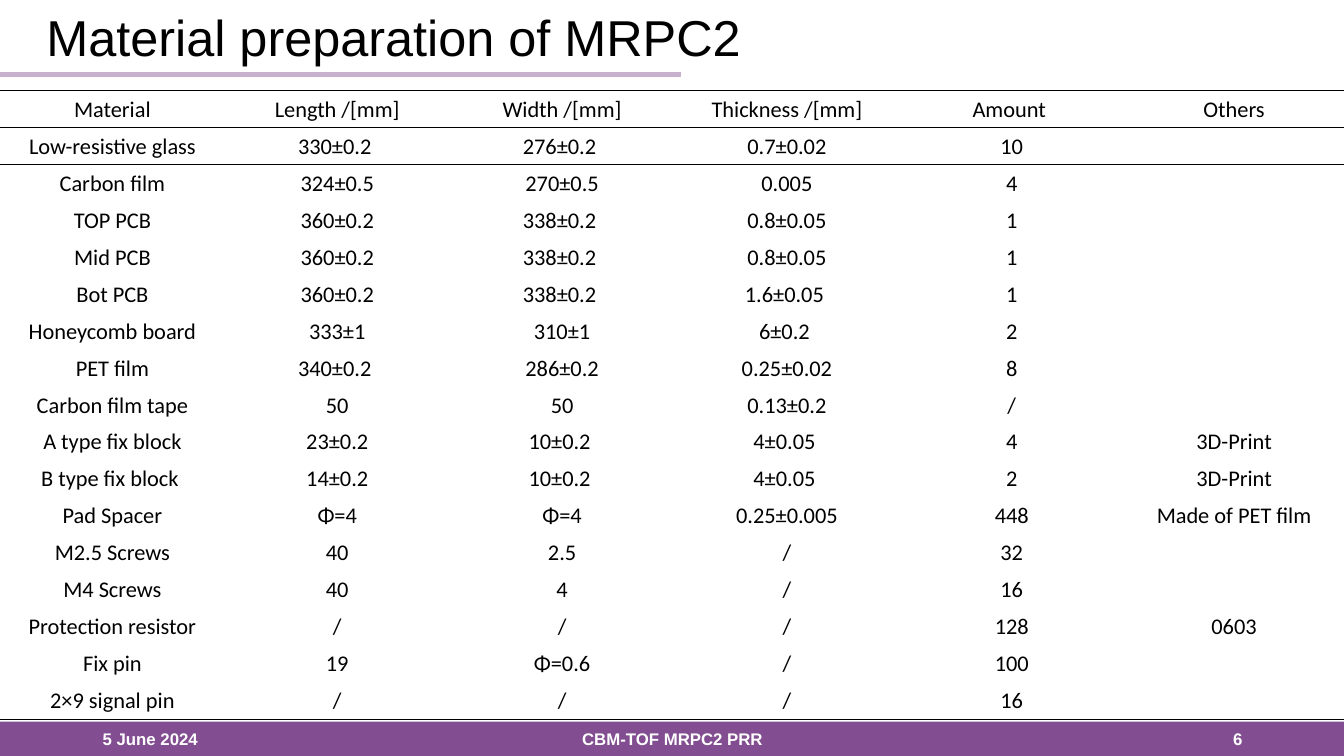
from lxml import etree
from pptx import Presentation
from pptx import util as u
from pptx.dml.color import RGBColor
from pptx.enum import shapes, text
from pptx.oxml import ns

PX = 9144
BLACK = RGBColor(0x00, 0x00, 0x00)
WHITE = RGBColor(0xFF, 0xFF, 0xFF)
LILAC = RGBColor(0xC8, 0xB0, 0xCF)
PURPLE = RGBColor(0x70, 0x33, 0x81)
NO_STYLE = "{2D5ABB26-0587-4C30-8999-92F81FD0307C}"
COLUMN_WIDTHS = [223] * 5 + [218]
ROW_HEIGHT = 33
MATERIALS = """\
Material|Length /[mm]|Width /[mm]|Thickness /[mm]|Amount |Others
Low-resistive glass|330±0.2 |276±0.2 |0.7±0.02|10|
Carbon film|324±0.5|270±0.5|0.005|4|
TOP PCB|360±0.2|338±0.2 |0.8±0.05|1|
Mid PCB|360±0.2|338±0.2 |0.8±0.05|1|
Bot PCB|360±0.2|338±0.2 |1.6±0.05 |1|
Honeycomb board|333±1|310±1|6±0.2 |2|
PET film|340±0.2 |286±0.2|0.25±0.02|8|
Carbon film tape|50|50|0.13±0.2|/|
A type fix block|23±0.2|10±0.2 |4±0.05 |4|3D-Print
B type fix block |14±0.2|10±0.2 |4±0.05 |2|3D-Print
Pad Spacer|Φ=4|Φ=4|0.25±0.005|448|Made of PET film
M2.5 Screws|40|2.5|/|32|
M4 Screws|40|4|/|16|
Protection resistor|/|/|/|128|0603
Fix pin|19|Φ=0.6|/|100|
2×9 signal pin|/|/|/|16|"""


def px(*lengths):
    """Turn pixel lengths into EMU."""
    return [u.Emu(length * PX) for length in lengths]


def add_run(paragraph, words, size, font_name, color, bold=False):
    """Append one formatted run to a paragraph."""
    run = paragraph.add_run()
    run.text = words
    run.font.size = u.Pt(size)
    run.font.name = font_name
    run.font.bold = bold
    run.font.color.rgb = color


def set_title(slide, words):
    """Place and fill the title placeholder."""
    title = slide.shapes.title
    title.left, title.top, title.width, title.height = px(36, 6, 1254, 68)
    title.text_frame.vertical_anchor = text.MSO_ANCHOR.MIDDLE
    title.text_frame.auto_size = text.MSO_AUTO_SIZE.NONE
    paragraph = title.text_frame.paragraphs[0]
    paragraph.alignment = text.PP_ALIGN.LEFT
    paragraph.line_spacing = 0.9
    add_run(paragraph, words, 36, "Arial", BLACK)


def add_title_rule(slide):
    """Draw the lilac line under the title."""
    rule = slide.shapes.add_connector(shapes.MSO_CONNECTOR.STRAIGHT, *px(0, 74, 675, 74))
    rule.line.color.rgb = LILAC
    rule.line.width = u.Pt(3)
    etree.SubElement(rule.element.spPr, ns.qn("a:effectLst"))


def add_footer_band(slide):
    """Draw the translucent purple band at the foot."""
    band = slide.shapes.add_shape(shapes.MSO_SHAPE.RECTANGLE, *px(0, 716, 1333, 34))
    band.shadow.inherit = False
    band.fill.solid()
    band.fill.fore_color.rgb = PURPLE
    band.line.fill.background()
    color = band.element.spPr.find(".//" + ns.qn("a:srgbClr"))
    etree.SubElement(color, ns.qn("a:alpha"), val="87000")


def add_footer_text(slide, left, width, words, alignment):
    """Add one bold white label on the footer band."""
    box = slide.shapes.add_textbox(*px(left, 713, width, 40))
    box.text_frame.word_wrap = True
    box.text_frame.vertical_anchor = text.MSO_ANCHOR.MIDDLE
    paragraph = box.text_frame.paragraphs[0]
    paragraph.alignment = alignment
    add_run(paragraph, words, 12, "Arial", WHITE, bold=True)


def add_border(properties, tag):
    """Put a thin black border before the other cell properties."""
    border = etree.Element(ns.qn(tag), w=str(u.Pt(1)))
    fill = etree.SubElement(border, ns.qn("a:solidFill"))
    etree.SubElement(fill, ns.qn("a:srgbClr"), val=str(BLACK))
    properties.insert(0, border)


def fill_cell(cell, words, top, bottom):
    """Write one centred cell and its horizontal borders."""
    cell.fill.background()
    paragraph = cell.text_frame.paragraphs[0]
    paragraph.alignment = text.PP_ALIGN.CENTER
    if words:
        add_run(paragraph, words, 16, "Calibri", BLACK)
    else:
        etree.SubElement(paragraph._p, ns.qn("a:endParaRPr"), sz="1600")
    properties = cell._tc.get_or_add_tcPr()
    if bottom:
        add_border(properties, "a:lnB")
    if top:
        add_border(properties, "a:lnT")


def add_material_table(slide):
    """Add the table of materials with three ruled lines."""
    rows = [line.split("|") for line in MATERIALS.splitlines()]
    frame = slide.shapes.add_table(
        len(rows), len(COLUMN_WIDTHS),
        *px(0, 90, sum(COLUMN_WIDTHS), ROW_HEIGHT * len(rows)))
    frame.element.find(".//" + ns.qn("a:tableStyleId")).text = NO_STYLE
    table = frame.table
    table.first_row = table.horz_banding = False
    for column, width in zip(table.columns, COLUMN_WIDTHS):
        column.width = u.Emu(width * PX)
    last = len(rows) - 1
    for row_index, row in enumerate(rows):
        table.rows[row_index].height = u.Emu(ROW_HEIGHT * PX)
        for column_index, words in enumerate(row):
            fill_cell(table.cell(row_index, column_index), words,
                      top=row_index in (0, 1), bottom=row_index in (0, last))


def main():
    """Build the slide and save it."""
    presentation = Presentation()
    presentation.slide_width, presentation.slide_height = px(1333, 750)
    slide = presentation.slides.add_slide(presentation.slide_layouts[5])
    add_title_rule(slide)
    add_footer_band(slide)
    set_title(slide, "Material preparation of MRPC2")
    add_footer_text(slide, 92, 300, "5 June 2024", text.PP_ALIGN.LEFT)
    add_footer_text(slide, 442, 450, "CBM-TOF MRPC2 PRR", text.PP_ALIGN.CENTER)
    add_footer_text(slide, 942, 300, "6", text.PP_ALIGN.RIGHT)
    add_material_table(slide)
    presentation.save("out.pptx")


if __name__ == "__main__":
    main()
